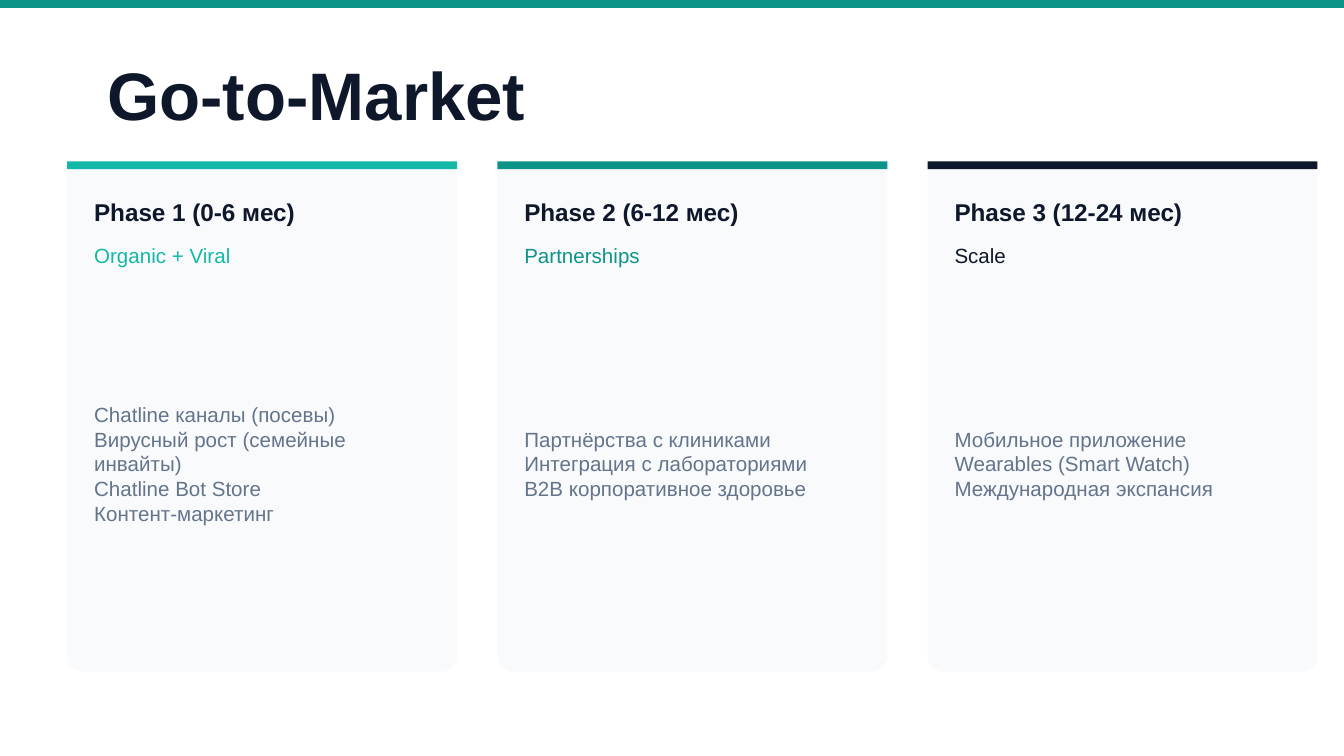
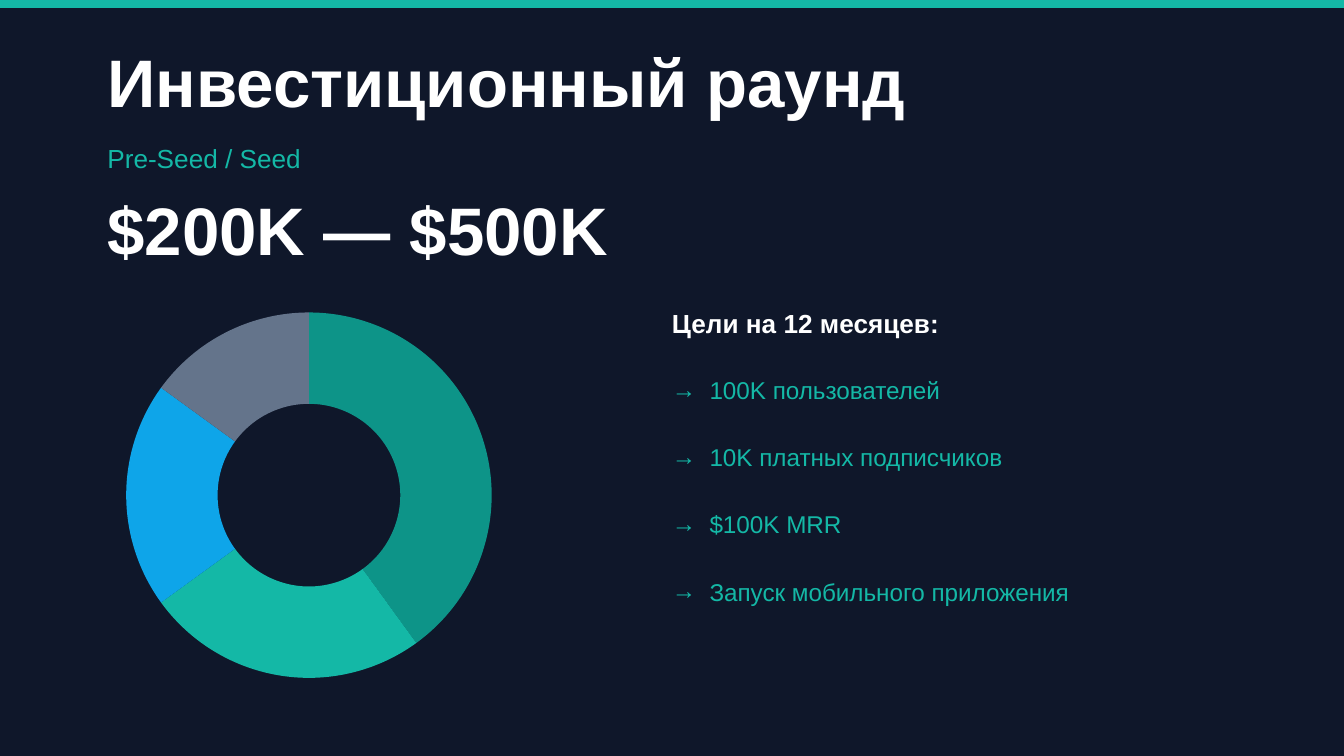
from lxml import etree
from pptx import Presentation
from pptx import util as u
from pptx.chart import data
from pptx.dml.color import RGBColor
from pptx.enum import chart, shapes, text
from pptx.oxml import ns

HUES = {
    "white": "FFFFFF",
    "ink": "0F172A",
    "teal": "0D9488",
    "mint": "14B8A6",
    "sky": "0EA5E9",
    "slate": "64748B",
    "card": "F8FAFC",
}
FONT = "Arial"
WIDE, HIGH = 25.4, 14.29
BAND = 0.15
LEFT = 2.03

PHASES = [
    ("Phase 1 (0-6 мес)", "Organic + Viral", "mint",
     ["Chatline каналы (посевы)", "Вирусный рост (семейные инвайты)",
      "Chatline Bot Store", "Контент-маркетинг"]),
    ("Phase 2 (6-12 мес)", "Partnerships", "teal",
     ["Партнёрства с клиниками", "Интеграция с лабораториями",
      "B2B корпоративное здоровье"]),
    ("Phase 3 (12-24 мес)", "Scale", "ink",
     ["Мобильное приложение", "Wearables (Smart Watch)",
      "Международная экспансия"]),
]
FUNDS = [(40, "teal"), (25, "mint"), (20, "sky"), (15, "slate")]
GOALS = ["100K пользователей", "10K платных подписчиков", "$100K MRR",
         "Запуск мобильного приложения"]


def rgb(hue):
    return RGBColor.from_string(HUES[hue])


def cm(*sizes):
    return [u.Cm(size) for size in sizes]


class Deck:
    def __init__(self):
        self.prs = Presentation()
        self.prs.slide_width, self.prs.slide_height = cm(WIDE, HIGH)
        self.slide = None

    def page(self, back, band, title, hue, top):
        """Start a slide with its background, top band and title."""
        self.slide = self.prs.slides.add_slide(self.prs.slide_layouts[6])
        fill = self.slide.background.fill
        fill.solid()
        fill.fore_color.rgb = rgb(back)
        self.box((0, 0, WIDE, BAND), band)
        self.text((LEFT, top, 20.32, 1.52), [title], 36, hue, True)

    def box(self, at, hue, bend=None):
        """Draw a plain rectangle, rounded when bend is given."""
        kind = shapes.MSO_SHAPE
        form = self.slide.shapes.add_shape(
            kind.ROUNDED_RECTANGLE if bend else kind.RECTANGLE, *cm(*at))
        if bend:
            form.adjustments[0] = bend
        form.shadow.inherit = False
        form.fill.solid()
        form.fill.fore_color.rgb = rgb(hue)
        form.line.fill.background()

    def text(self, at, lines, size, hue, bold=False, mark=None):
        frame = self.slide.shapes.add_textbox(*cm(*at)).text_frame
        frame.word_wrap = True
        frame.vertical_anchor = text.MSO_ANCHOR.MIDDLE
        frame.margin_left = frame.margin_right = 0
        frame.margin_top = frame.margin_bottom = 0
        for i, line in enumerate(lines):
            para = frame.add_paragraph() if i else frame.paragraphs[0]
            if mark:
                self.mark(para, mark)
            run = para.add_run()
            run.text = line
            font = run.font
            font.name, font.size, font.bold = FONT, u.Pt(size), bold
            font.color.rgb = rgb(hue)

    def mark(self, para, sign):
        """Give a paragraph a hanging bullet."""
        props = para._p.get_or_add_pPr()
        hang = u.Cm(0.71)
        props.set("marL", str(hang))
        props.set("indent", str(-hang))
        etree.SubElement(props, ns.qn("a:buFont")).set("typeface", FONT)
        etree.SubElement(props, ns.qn("a:buChar")).set("char", sign)

    def ring(self, at, parts):
        """Add an unlabelled doughnut chart of (value, hue) parts."""
        table = data.CategoryChartData()
        table.categories = [""] * len(parts)
        table.add_series("", [value for value, _ in parts])
        graph = self.slide.shapes.add_chart(
            chart.XL_CHART_TYPE.DOUGHNUT, *cm(*at), table).chart
        graph.has_legend = graph.has_title = False
        graph.font.name, graph.font.size = FONT, u.Pt(10)
        plot = graph.plots[0]
        plot.vary_by_categories = True
        for i, (_, hue) in enumerate(parts):
            form = plot.series[0].points[i].format
            form.fill.solid()
            form.fill.fore_color.rgb = rgb(hue)
            form.line.fill.background()
        self.fit(graph, 0.16, 0.04, 0.68, 0.91)

    def fit(self, graph, *area):
        """Place the plot by fractions of the chart: x, y, w, h."""
        zone = graph._chartSpace.chart.plotArea
        for old in zone.findall(ns.qn("c:layout")):
            zone.remove(old)
        layout = etree.Element(ns.qn("c:layout"))
        zone.insert(0, layout)
        spot = etree.SubElement(layout, ns.qn("c:manualLayout"))
        rules = [("layoutTarget", "inner"), ("xMode", "edge"),
                 ("yMode", "edge"), *zip("xywh", area)]
        for tag, value in rules:
            etree.SubElement(spot, ns.qn("c:" + tag)).set("val", str(value))

    def phase(self, left, name, theme, hue, steps):
        """Draw one phase card."""
        top, wide, pad = 3.05, 7.37, 0.51
        self.box((left, top, wide, 9.65), "card", 0.041)
        self.box((left, top, wide, BAND), hue)
        x, room = left + pad, wide - 2 * pad
        self.text((x, 3.56, room, 0.89), [name], 13, "ink", True)
        self.text((x, 4.45, room, 0.76), [theme], 11, hue)
        self.text((x, 5.59, room, 6.35), steps, 11, "slate")


def main():
    deck = Deck()

    deck.page("white", "teal", "Go-to-Market", "ink", 1.02)
    for i, phase in enumerate(PHASES):
        deck.phase(1.27 + 8.13 * i, *phase)

    deck.page("ink", "mint", "Инвестиционный раунд", "white", 0.76)
    deck.text((LEFT, 2.54, 7.62, 0.89), ["Pre-Seed / Seed"], 14, "mint")
    deck.text((LEFT, 3.43, 10.16, 1.78), ["$200K — $500K"], 36, "white", True)
    deck.ring((0.76, 5.59, 10.16, 7.62), FUNDS)
    x, top, wide, high = 12.7, 5.59, 11.43, 1.02
    deck.text((x, top, wide, high), ["Цели на 12 месяцев:"], 14, "white", True)
    for i, goal in enumerate(GOALS, 1):
        deck.text((x, top + 1.27 * i, wide, high), [goal], 13, "mint",
                  mark="→")

    deck.prs.save("out.pptx")


if __name__ == "__main__":
    main()
